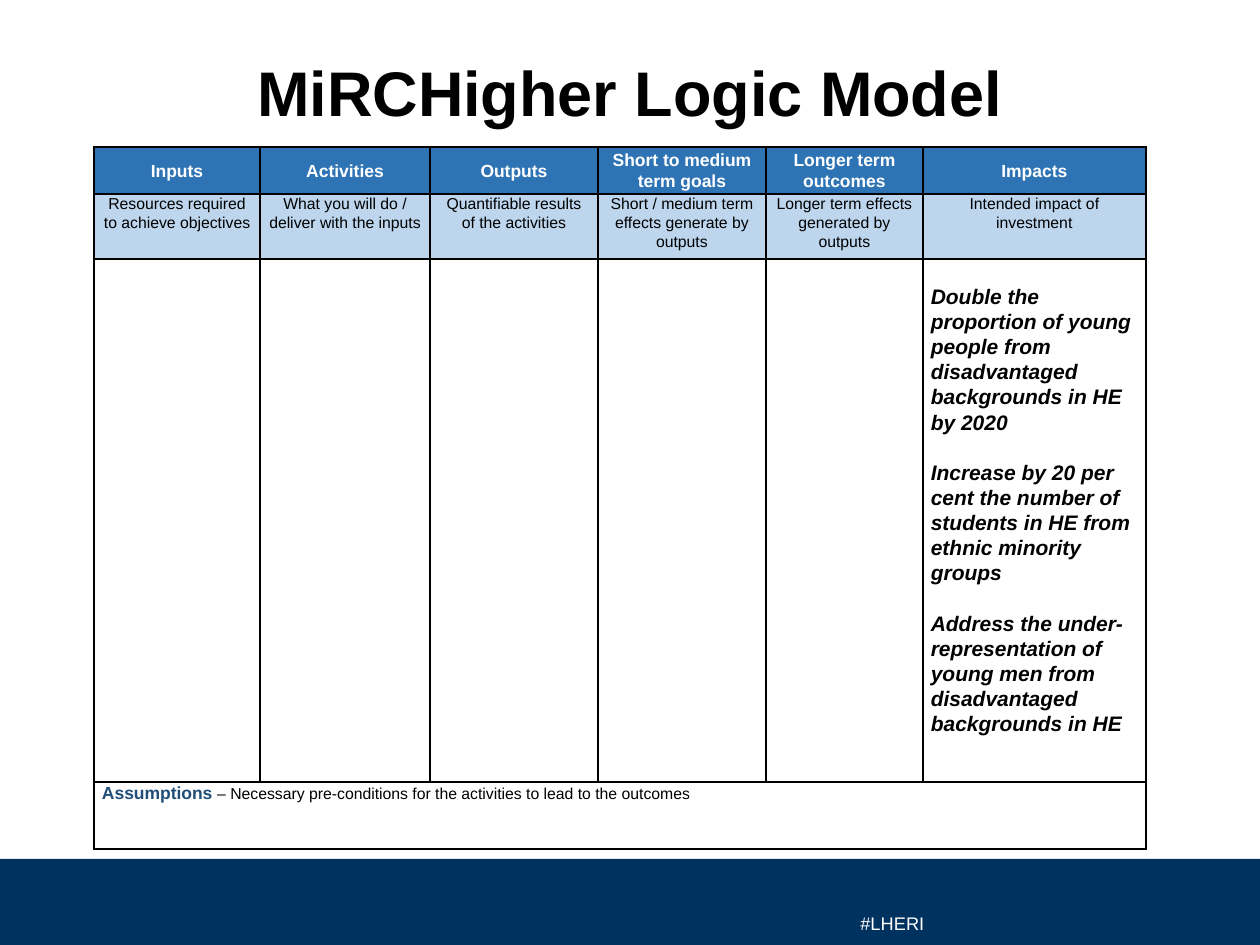
from lxml import etree
from pptx import Presentation
from pptx import util as u
from pptx.dml.color import RGBColor
from pptx.enum import shapes, text
from pptx.oxml.ns import qn

PX = 914400 / 126
FONT = "Arial"
BLACK = RGBColor(0x00, 0x00, 0x00)
WHITE = RGBColor(0xFF, 0xFF, 0xFF)
NAVY = RGBColor(0x00, 0x32, 0x5F)
BLUE = RGBColor(0x2E, 0x74, 0xB5)
PALE = RGBColor(0xBD, 0xD6, 0xEE)
DARK_BLUE = RGBColor(0x1F, 0x4E, 0x79)
CENTER, LEFT = text.PP_ALIGN.CENTER, text.PP_ALIGN.LEFT
MIDDLE, TOP = text.MSO_ANCHOR.MIDDLE, text.MSO_ANCHOR.TOP

COLUMNS = [166, 170, 168, 168, 157, 223]
ROWS = [47, 65, 523, 67]
STAGES = [
    ("Inputs", "Resources required to achieve objectives"),
    ("Activities", "What you will do / deliver with the inputs"),
    ("Outputs", "Quantifiable results of the activities"),
    ("Short to medium term goals", "Short / medium term effects generate by outputs"),
    ("Longer term outcomes", "Longer term effects generated by outputs"),
    ("Impacts", "Intended impact of investment"),
]
IMPACTS = [
    "Double the proportion of young people from disadvantaged backgrounds in HE by 2020",
    "Increase by 20 per cent the number of students in HE from ethnic minority groups",
    "Address the under-representation of young men from disadvantaged backgrounds in HE",
]


def px(n):
    return u.Emu(round(n * PX))


class SlideBuilder:
    def __init__(self, slide):
        self.s = slide

    def run(self, p, words, size, color=BLACK, bold=False, italic=False):
        r = p.add_run()
        r.text = words
        f = r.font
        f.name, f.size, f.bold, f.italic = FONT, u.Pt(size), bold, italic
        f.color.rgb = color
        return r

    def band(self, x, y, w, h, color):
        sp = self.s.shapes.add_shape(shapes.MSO_SHAPE.RECTANGLE, px(x), px(y), px(w), px(h))
        sp.shadow.inherit = False
        sp.fill.solid()
        sp.fill.fore_color.rgb = color
        sp.line.fill.background()

    def label(self, x, y, w, h, words, size, color=BLACK, bold=False,
              align=LEFT, anchor=TOP, wrap=True):
        tf = self.s.shapes.add_textbox(px(x), px(y), px(w), px(h)).text_frame
        tf.word_wrap, tf.vertical_anchor = wrap, anchor
        p = tf.paragraphs[0]
        p.alignment = align
        return self.run(p, words, size, color, bold)

    def table(self, x, y, columns, rows):
        frame = self.s.shapes.add_table(len(rows), len(columns), px(x), px(y),
                                        px(sum(columns)), px(sum(rows)))
        table = frame.table
        table.first_row = table.horz_banding = False
        for column, width in zip(table.columns, columns):
            column.width = px(width)
        for row, height in zip(table.rows, rows):
            row.height = px(height)
        for cell in table.iter_cells():
            cell.margin_left = cell.margin_right = px(8)
            cell.margin_top = cell.margin_bottom = 0
            self.borders(cell)
            cell.fill.background()
        return table

    def borders(self, cell):
        tcPr = cell._tc.get_or_add_tcPr()
        for side in ("a:lnL", "a:lnR", "a:lnT", "a:lnB"):
            ln = etree.SubElement(tcPr, qn(side), w=str(u.Pt(1)))
            fill = etree.SubElement(ln, qn("a:solidFill"))
            etree.SubElement(fill, qn("a:srgbClr"), val=str(BLACK))

    def cell(self, cell, paragraphs, fill=None, align=LEFT, anchor=TOP, gap=0):
        """Each paragraph is a list of (words, run style) pairs."""
        cell.vertical_anchor = anchor
        if fill is not None:
            cell.fill.solid()
            cell.fill.fore_color.rgb = fill
        tf = cell.text_frame
        for i, runs in enumerate(paragraphs):
            p = tf.add_paragraph() if i else tf.paragraphs[0]
            p.alignment, p.line_spacing = align, 1.07
            if i:
                p.space_before = u.Pt(gap)
            for words, style in runs:
                self.run(p, words, **style)


def main():
    prs = Presentation()
    prs.slide_width, prs.slide_height = px(1260), px(945)
    b = SlideBuilder(prs.slides.add_slide(prs.slide_layouts[6]))

    b.band(0, 859, 1260, 86, NAVY)
    hashtag = b.label(848, 885, 100, 38, "#LHERI", 18, WHITE, wrap=False)
    hashtag.font._element.set("baseline", "-25000")
    b.label(63, 38, 1134, 107, "MiRCHigher Logic Model", 36, bold=True,
            align=CENTER, anchor=MIDDLE)

    table = b.table(94, 147, COLUMNS, ROWS)
    heading = dict(size=10, color=WHITE, bold=True)
    for col, (name, meaning) in enumerate(STAGES):
        b.cell(table.cell(0, col), [[(name, heading)]], BLUE, CENTER, MIDDLE)
        b.cell(table.cell(1, col), [[(meaning, dict(size=9))]], PALE, CENTER)

    impact = dict(size=12, bold=True, italic=True)
    impacts = table.cell(2, len(COLUMNS) - 1)
    b.cell(impacts, [[(words, impact)] for words in IMPACTS], anchor=MIDDLE, gap=14.4)
    impacts.margin_bottom = px(21)

    assumptions = table.cell(3, 0)
    assumptions.merge(table.cell(3, len(COLUMNS) - 1))
    b.cell(assumptions, [[
        ("Assumptions ", dict(size=10, color=DARK_BLUE, bold=True)),
        ("– Necessary pre-conditions for the activities to lead to the outcomes", dict(size=9)),
    ]])
    prs.save("out.pptx")


if __name__ == "__main__":
    main()
